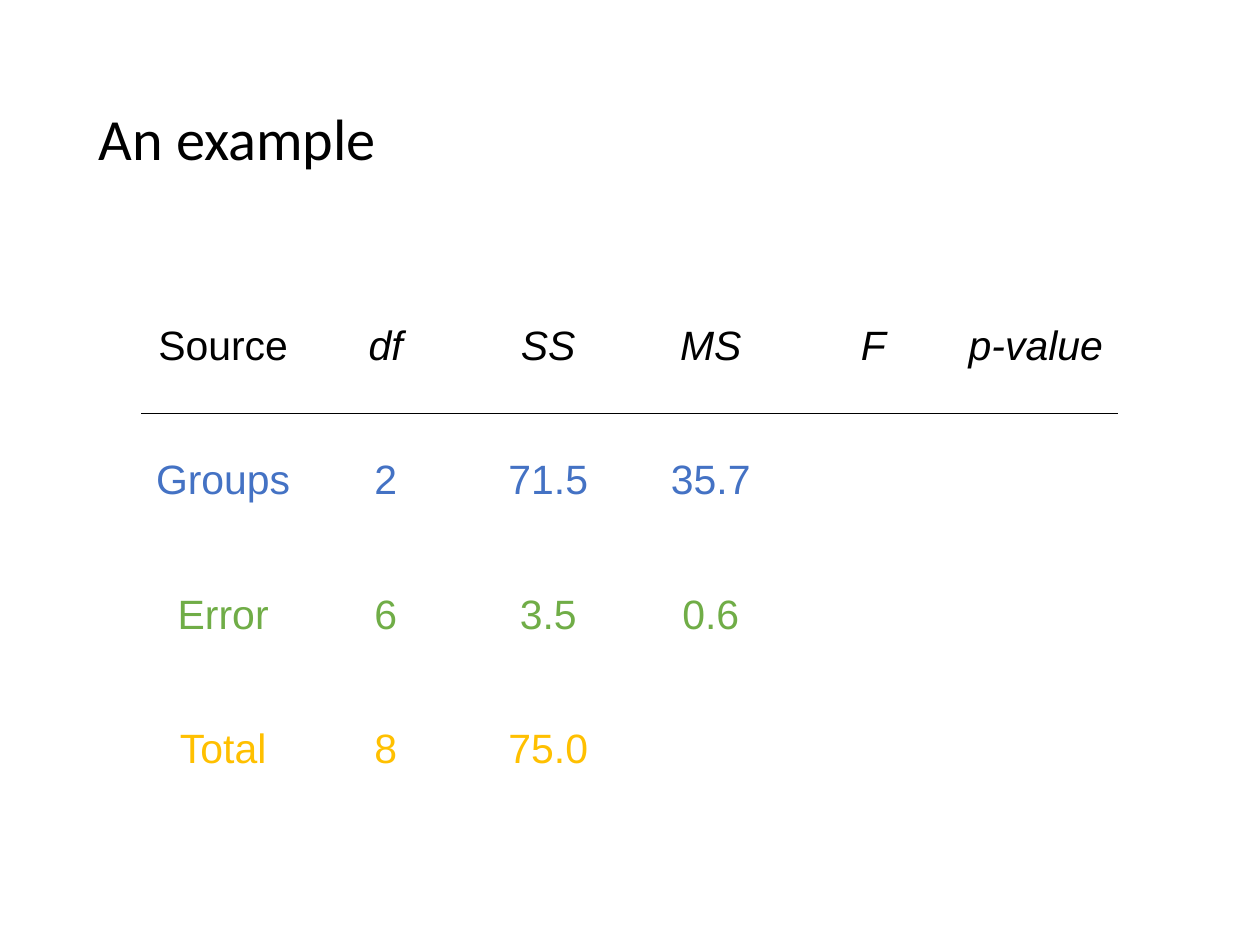
import lxml.etree
import pptx
import pptx.dml.color
import pptx.enum.text
import pptx.oxml
import pptx.oxml.ns
import pptx.util

Cm = pptx.util.Cm
Pt = pptx.util.Pt
MIDDLE = pptx.enum.text.MSO_ANCHOR.MIDDLE

# Content
TITLE = "An example"
COLORS = {"black": "000000", "groups": "4472C4", "error": "70AD47", "total": "FFC000"}
ROWS = [
    ("black", ["Source", "df", "SS", "MS", "F", "p-value"]),
    ("groups", ["Groups", "2", "71.5", "35.7", "", ""]),
    ("error", ["Error", "6", "3.5", "0.6", "", ""]),
    ("total", ["Total", "8", "75.0", "", "", ""]),
]

# Formats and measures
TITLE_FONT = {"name": "Calibri", "size": Pt(37), "bold": False}
TABLE_FONT = {"name": "Arial", "size": Pt(26), "bold": False}
CELL_FORMAT = {"vertical_anchor": MIDDLE, "margin_left": Cm(0.1), "margin_right": Cm(0.1)}
TITLE_FORMAT = {"vertical_anchor": MIDDLE, "word_wrap": True}
TITLE_FORMAT.update({f"margin_{side}": Cm(0.28) for side in ("left", "top", "right", "bottom")})
TITLE_BOX = {"left": Cm(1.93), "top": Cm(1.12), "width": Cm(24.33), "height": Cm(4.09)}
TABLE_LEFT, TABLE_TOP = Cm(3.18), Cm(6.25)
COLUMN_WIDTH, ROW_HEIGHT = Cm(3.64), Cm(3.01)


def apply_format(target, values):
    for name, value in values.items():
        setattr(target, name, value)


def format_font(font, values, color):
    apply_format(font, values)
    font.color.rgb = pptx.dml.color.RGBColor.from_string(COLORS[color])


def add_border(cell, side):
    properties = cell._tc.get_or_add_tcPr()
    line = pptx.oxml.parse_xml(
        f'<a:{side} {pptx.oxml.ns.nsdecls("a")} w="{Pt(1)}"><a:solidFill>'
        f'<a:srgbClr val="{COLORS["black"]}"/></a:solidFill></a:{side}>'
    )
    properties.insert(0, line)


presentation = pptx.Presentation()
presentation.slide_width, presentation.slide_height = Cm(28.22), Cm(21.16)
slide = presentation.slides.add_slide(presentation.slide_layouts[5])

# Title
title = slide.shapes.title
apply_format(title, TITLE_BOX)
apply_format(title.text_frame, TITLE_FORMAT)
title.text_frame.text = TITLE
paragraph = title.text_frame.paragraphs[0]
apply_format(paragraph, {"alignment": pptx.enum.text.PP_ALIGN.LEFT, "line_spacing": 0.9})
format_font(paragraph.runs[0].font, TITLE_FONT, "black")

# Analysis of variance table
column_count = len(ROWS[0][1])
table = slide.shapes.add_table(
    len(ROWS), column_count, TABLE_LEFT, TABLE_TOP,
    COLUMN_WIDTH * column_count, ROW_HEIGHT * len(ROWS),
).table
apply_format(table, {"first_row": False, "horz_banding": False})

for row_index, (color, texts) in enumerate(ROWS):
    for column_index, text in enumerate(texts):
        cell = table.cell(row_index, column_index)
        apply_format(cell, CELL_FORMAT)
        cell.fill.background()
        if text:
            cell.text = text
            paragraph = cell.text_frame.paragraphs[0]
            paragraph.alignment = pptx.enum.text.PP_ALIGN.CENTER
            font = paragraph.runs[0].font
            format_font(font, TABLE_FONT, color)
            font.italic = row_index == 0 and column_index > 0
        # Rule between the header and the body
        if row_index < 2:
            add_border(cell, ("lnB", "lnT")[row_index])

presentation.save("out.pptx")
